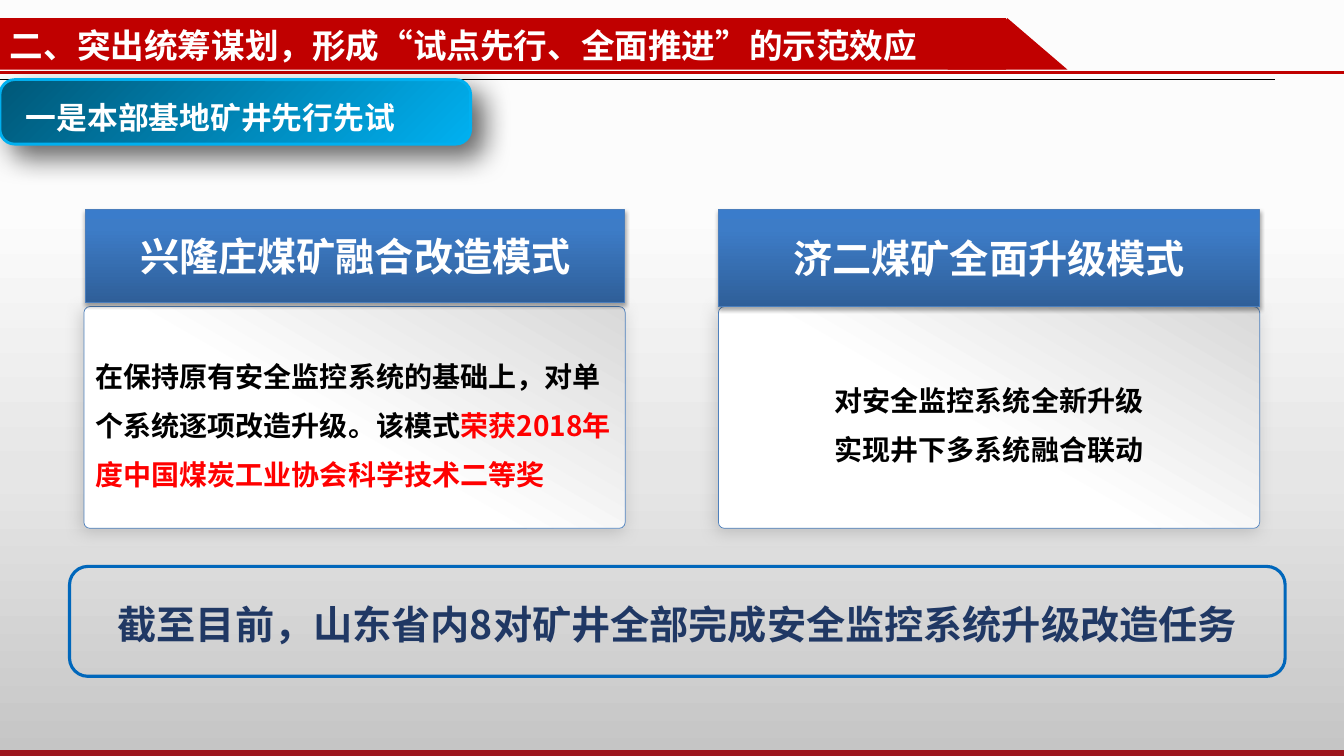
from dataclasses import dataclass
from typing import Any, NamedTuple, Optional

import lxml.etree
import pptx
import pptx.dml.color
import pptx.enum.shapes
import pptx.enum.text
import pptx.oxml.ns
import pptx.util

Pt = pptx.util.Pt
RGBColor = pptx.dml.color.RGBColor
qn = pptx.oxml.ns.qn
SHAPE = pptx.enum.shapes.MSO_SHAPE
ALIGN = pptx.enum.text.PP_ALIGN

# Colours
WHITE = RGBColor(0xFF, 0xFF, 0xFF)
BLACK = RGBColor(0x00, 0x00, 0x00)
RED = RGBColor(0xC0, 0x00, 0x00)
DARK_RED = RGBColor(0x9D, 0x16, 0x1E)
AWARD_RED = RGBColor(0xFF, 0x00, 0x00)
NAVY = RGBColor(0x20, 0x38, 0x64)
FRAME_BLUE = RGBColor(0x00, 0x67, 0xBB)
CARD_EDGE = RGBColor(0x4F, 0x81, 0xBD)
HEADER_EDGE = RGBColor(0x4B, 0x7E, 0xBC)
CYAN = RGBColor(0x00, 0xB0, 0xF0)
TEAL = RGBColor(0x00, 0x58, 0x78)
GREY = RGBColor(0x80, 0x80, 0x80)
PAGE_TOP = RGBColor(0xFC, 0xFC, 0xFC)
PAGE_MIDDLE = RGBColor(0xE6, 0xE6, 0xE6)
PAGE_BOTTOM = RGBColor(0xC5, 0xC5, 0xC5)
CARD_GREY = RGBColor(0xD9, 0xD9, 0xD9)
HEADER_DARK = RGBColor(0x2F, 0x5F, 0x99)
HEADER_MID = RGBColor(0x3D, 0x7C, 0xC7)
HEADER_LIGHT = RGBColor(0x3A, 0x7C, 0xCB)

CJK = "Noto Sans CJK SC"


class Box(NamedTuple):
    left: float
    top: float
    width: float
    height: float

    def lengths(self) -> list:
        return [Pt(value) for value in self]


class Gradient(NamedTuple):
    stops: list
    angle: int  # clockwise degrees


class Shadow(NamedTuple):
    color: RGBColor
    alpha: int
    blur: float
    distance: float
    angle: int


class Edge(NamedTuple):
    color: RGBColor
    width: float


@dataclass
class Style:
    size: float
    color: RGBColor
    name: str = CJK
    align: Any = ALIGN.LEFT
    spacing: Any = None
    shadow: Optional[Shadow] = None


@dataclass
class Card:
    header: Box
    body: Box
    heading: str
    paragraphs: list
    align: Any


def add_child(parent: Any, tag: str, **attributes: Any) -> Any:
    values = {key: str(value) for key, value in attributes.items()}
    return lxml.etree.SubElement(parent, qn(tag), values)


def add_shadow(effects: Any, shadow: Shadow) -> None:
    outer = add_child(effects, "a:outerShdw", blurRad=int(Pt(shadow.blur)),
                      dist=int(Pt(shadow.distance)), dir=shadow.angle * 60000,
                      algn="ctr", rotWithShape=0)
    color = add_child(outer, "a:srgbClr", val=shadow.color)
    add_child(color, "a:alpha", val=shadow.alpha * 1000)


def paint(shape: Any, fill: Any) -> None:
    if fill is None:
        shape.fill.background()
    elif isinstance(fill, Gradient):
        shape.fill.gradient()
        shape.fill.gradient_angle = (360 - fill.angle) % 360
        stops = shape.element.spPr.find(qn("a:gradFill")).find(qn("a:gsLst"))
        stops.clear()
        for position, color in fill.stops:
            add_child(add_child(stops, "a:gs", pos=position * 1000), "a:srgbClr", val=color)
    else:
        shape.fill.solid()
        shape.fill.fore_color.rgb = fill


def draw_shape(slide: Any, kind: Any, box: Box, fill: Any = None, edge: Optional[Edge] = None,
               shadow: Optional[Shadow] = None, corner: Optional[float] = None) -> Any:
    shape = slide.shapes.add_shape(kind, *box.lengths())
    if corner is not None:
        shape.adjustments[0] = corner
    paint(shape, fill)
    if edge:
        shape.line.color.rgb = edge.color
        shape.line.width = Pt(edge.width)
    else:
        shape.line.fill.background()
    shape.shadow.inherit = False
    if shadow:
        add_shadow(shape.element.spPr.find(qn("a:effectLst")), shadow)
    return shape


def draw_rule(slide: Any, y: float, right: float, edge: Edge) -> None:
    rule = slide.shapes.add_connector(pptx.enum.shapes.MSO_CONNECTOR.STRAIGHT,
                                      Pt(0), Pt(y), Pt(right), Pt(y))
    rule.line.color.rgb = edge.color
    rule.line.width = Pt(edge.width)
    add_child(rule.element.spPr, "a:effectLst")


def write(shape: Any, paragraphs: list, style: Style, anchor: Any) -> None:
    """Each paragraph is a list of (text, colour) runs; colour None means the style's."""
    frame = shape.text_frame
    for key, value in {"word_wrap": True, "vertical_anchor": anchor}.items():
        setattr(frame, key, value)
    for index, runs in enumerate(paragraphs):
        paragraph = frame.add_paragraph() if index else frame.paragraphs[0]
        for key, value in {"alignment": style.align, "line_spacing": style.spacing}.items():
            setattr(paragraph, key, value)
        for text, color in runs:
            run = paragraph.add_run()
            run.text = text
            for key, value in {"size": Pt(style.size), "bold": True, "name": style.name}.items():
                setattr(run.font, key, value)
            run.font.color.rgb = color or style.color
            properties = run.font.fill and run._r.get_or_add_rPr()
            add_child(properties, "a:ea", typeface=CJK)
            if style.shadow:
                effects = properties.makeelement(qn("a:effectLst"), {})
                properties.find(qn("a:solidFill")).addnext(effects)
                add_shadow(effects, style.shadow)


def draw_text(slide: Any, box: Box, text: str, style: Style) -> None:
    label = slide.shapes.add_textbox(*box.lengths())
    write(label, [[(text, None)]], style, pptx.enum.text.MSO_ANCHOR.TOP)


def draw_card(slide: Any, card: Card) -> None:
    middle = pptx.enum.text.MSO_ANCHOR.MIDDLE
    body = draw_shape(slide, SHAPE.ROUNDED_RECTANGLE, card.body,
                      Gradient([(45, WHITE), (100, CARD_GREY)], 300),
                      Edge(CARD_EDGE, 0.5), Shadow(GREY, 34, 12, 3, 135), 0.027)
    write(body, card.paragraphs, Style(20, BLACK, align=card.align, spacing=Pt(35)), middle)
    header = draw_shape(slide, SHAPE.RECTANGLE, card.header,
                        Gradient([(0, HEADER_DARK), (80, HEADER_MID), (100, HEADER_LIGHT)], 270),
                        Edge(HEADER_EDGE, 0.75), Shadow(BLACK, 35, 3.1, 1.8, 90))
    write(header, [[(card.heading, None)]], Style(28, WHITE, "Calibri", ALIGN.CENTER), middle)


CARDS = [
    Card(Box(61.2, 149.8, 385.2, 66.2), Box(60, 219, 386.6, 158.4), "兴隆庄煤矿融合改造模式",
         [[("在保持原有安全监控系统的基础上，对单个系统逐项改造升级。该模式", None),
           ("荣获2018年度中国煤炭工业协会科学技术二等奖", AWARD_RED)]], ALIGN.LEFT),
    Card(Box(513.2, 149.8, 386.6, 69.2), Box(513.2, 219, 386.6, 158.4), "济二煤矿全面升级模式",
         [[("对安全监控系统全新升级", None)], [("实现井下多系统融合联动", None)]], ALIGN.CENTER),
]


def main() -> None:
    deck = pptx.Presentation()
    deck.slide_width, deck.slide_height = Pt(960), Pt(540)
    slide = deck.slides.add_slide(deck.slide_layouts[6])

    # Page ground and rules
    draw_shape(slide, SHAPE.RECTANGLE, Box(0, 0, 960, 540),
               Gradient([(27, PAGE_TOP), (63, PAGE_MIDDLE), (100, PAGE_BOTTOM)], 90))
    draw_rule(slide, 51.8, 960, Edge(RED, 2.25))
    draw_rule(slide, 56.9, 910.8, Edge(BLACK, 0.5))
    draw_rule(slide, 538.6, 960, Edge(DARK_RED, 6))

    # Two upgrade modes
    for card in CARDS:
        draw_card(slide, card)

    # Conclusion
    draw_shape(slide, SHAPE.ROUNDED_RECTANGLE, Box(49.7, 404.6, 868.3, 78.5),
               edge=Edge(FRAME_BLUE, 2.25))
    draw_text(slide, Box(77, 424.1, 833, 40.3),
              "截至目前，山东省内8对矿井全部完成安全监控系统升级改造任务",
              Style(28, NAVY, spacing=Pt(35)))

    # Section badge
    draw_shape(slide, SHAPE.ROUNDED_RECTANGLE, Box(0, 56.9, 336.2, 46.1),
               Gradient([(0, CYAN), (100, TEAL)], 225), Edge(CYAN, 2),
               Shadow(BLACK, 60, 20, 12, 45), 0.23)
    draw_text(slide, Box(11.5, 54, 304.6, 42.5), "一是本部基地矿井先行先试",
              Style(22, WHITE, spacing=1.5))

    # Title banner
    draw_shape(slide, SHAPE.RECTANGLE, Box(0, 13, 718.6, 36.7), RED)
    draw_shape(slide, SHAPE.ISOSCELES_TRIANGLE, Box(676.8, 13, 85.7, 36.7), RED)
    draw_text(slide, Box(0, 14.4, 790.6, 36), "二、突出统筹谋划，形成“试点先行、全面推进”的示范效应",
              Style(24, WHITE, shadow=Shadow(BLACK, 43, 3, 3, 45)))

    deck.save("out.pptx")


if __name__ == "__main__":
    main()
